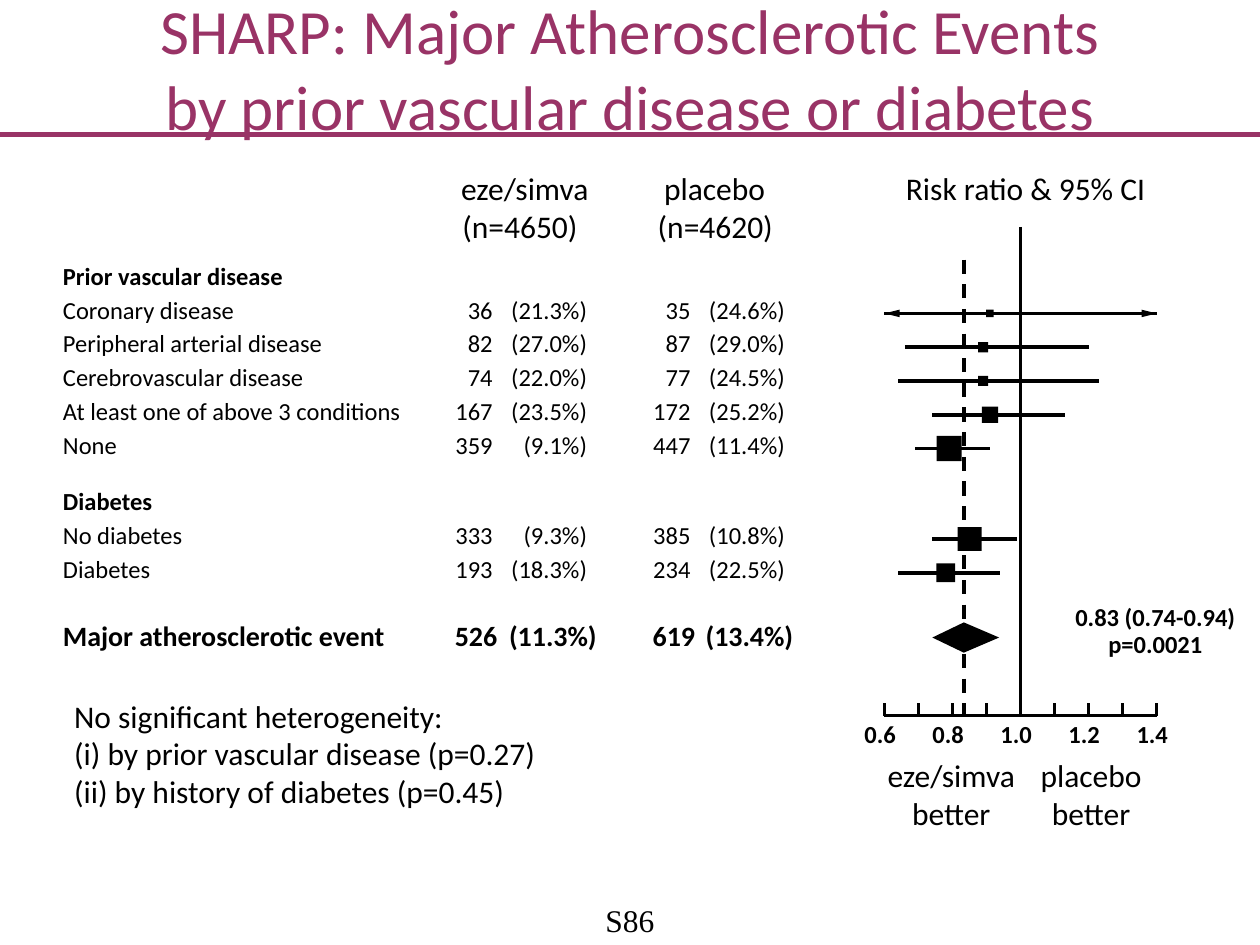
from dataclasses import dataclass

from lxml import etree
from pptx import Presentation
from pptx import util as u
from pptx.dml.color import RGBColor
from pptx.enum import dml, shapes, text
from pptx.oxml import ns

BLACK = "000000"
PLUM = "993366"
LEFT, CENTER, RIGHT = text.PP_ALIGN.LEFT, text.PP_ALIGN.CENTER, text.PP_ALIGN.RIGHT
LABEL_LEFT = 0.5
ROW_STEP = 0.268
AXIS_LEFT, AXIS_RIGHT, AXIS_TOP = 7.02, 9.18, 5.68
AXIS_START, INCHES_PER_UNIT = 0.6, 2.7


@dataclass(frozen=True)
class Row:
    label: str
    treated: tuple[str, str]
    placebo: tuple[str, str]
    ratio: float
    low: float
    high: float
    marker: float


@dataclass(frozen=True)
class Group:
    heading: str
    top: float
    rows: tuple[Row, ...]


GROUPS = (
    Group("Prior vascular disease", 2.07, (
        Row("Coronary disease", ("36", "(21.3%)"), ("35", "(24.6%)"), 0.91, 0.6, 1.4, 0.06),
        Row("Peripheral arterial disease", ("82", "(27.0%)"), ("87", "(29.0%)"), 0.89, 0.66, 1.2, 0.08),
        Row("Cerebrovascular disease", ("74", "(22.0%)"), ("77", "(24.5%)"), 0.89, 0.64, 1.23, 0.08),
        Row("At least one of above 3 conditions", ("167", "(23.5%)"), ("172", "(25.2%)"), 0.91, 0.74, 1.13, 0.13),
        Row("None", ("359", "(9.1%)"), ("447", "(11.4%)"), 0.79, 0.69, 0.91, 0.2),
    )),
    Group("Diabetes", 3.86, (
        Row("No diabetes", ("333", "(9.3%)"), ("385", "(10.8%)"), 0.85, 0.74, 0.99, 0.19),
        Row("Diabetes", ("193", "(18.3%)"), ("234", "(22.5%)"), 0.78, 0.64, 0.94, 0.15),
    )),
)


def colour(value: str) -> RGBColor:
    return RGBColor.from_string(value)


def ratio_x(ratio: float) -> float:
    return AXIS_LEFT + (ratio - AXIS_START) * INCHES_PER_UNIT


def add_text(page, lines: list[str], left: float, top: float, width: float, height: float,
             size: float = 14, bold: bool = False, align=LEFT, ink: str = BLACK,
             font: str = "Calibri", inset: tuple[float, float] = (0, 0), anchor=text.MSO_ANCHOR.TOP):
    box = page.shapes.add_textbox(u.Inches(left), u.Inches(top), u.Inches(width), u.Inches(height))
    frame = box.text_frame
    frame.word_wrap = True
    frame.vertical_anchor = anchor
    frame.margin_left = frame.margin_right = u.Inches(inset[0])
    frame.margin_top = frame.margin_bottom = u.Inches(inset[1])
    for index, line in enumerate(lines):
        para = frame.paragraphs[0] if index == 0 else frame.add_paragraph()
        para.text = line
        para.alignment = align
        para.font.name = font
        para.font.size = u.Pt(size)
        para.font.bold = bold
        para.font.color.rgb = colour(ink)


def add_line(page, start: tuple[float, float], end: tuple[float, float],
             ink: str = BLACK, width: float = 0, dashed: bool = False):
    line = page.shapes.add_connector(
        shapes.MSO_CONNECTOR.STRAIGHT, *(u.Inches(value) for value in start + end))
    line.line.color.rgb = colour(ink)
    line.line.width = u.Pt(width)
    if dashed:
        line.line.dash_style = dml.MSO_LINE.DASH
    etree.SubElement(line._element.spPr, ns.qn("a:effectLst"))


def fill_black(shape):
    shape.shadow.inherit = False
    shape.fill.solid()
    shape.fill.fore_color.rgb = colour(BLACK)
    shape.line.fill.background()


def add_polygon(page, points: list[tuple[float, float]]):
    corners = [(u.Inches(x), u.Inches(y)) for x, y in points]
    builder = page.shapes.build_freeform(*corners[0])
    builder.add_line_segments(corners[1:], close=True)
    fill_black(builder.convert_to_shape())


def add_row(page, row: Row, top: float):
    add_text(page, [row.label], LABEL_LEFT, top, 3.06, 0.31)
    for left, (count, percent) in ((3.56, row.treated), (5.13, row.placebo)):
        add_text(page, [count], left, top, 0.35, 0.31, align=RIGHT)
        add_text(page, [percent], left + 0.4, top, 0.7, 0.31, align=RIGHT)
    middle = top + 0.15
    half = row.marker / 2
    marker = page.shapes.add_shape(
        shapes.MSO_SHAPE.RECTANGLE, u.Inches(ratio_x(row.ratio) - half), u.Inches(middle - half),
        u.Inches(row.marker), u.Inches(row.marker))
    fill_black(marker)
    low, high = ratio_x(row.low), ratio_x(row.high)
    add_line(page, (low, middle), (high, middle))
    if row.low <= AXIS_START:
        for tip, base in ((low, low + 0.12), (high, high - 0.12)):
            add_polygon(page, [(tip, middle), (base, middle - 0.03), (base, middle + 0.03)])


def add_headings(page):
    for line, left, top in (
        ("eze/simva", 3.66, 1.34), ("(n=4650)", 3.67, 1.64),
        ("placebo", 5.27, 1.34), ("(n=4620)", 5.22, 1.64),
        ("Risk ratio & 95% CI", 7.19, 1.34),
    ):
        add_text(page, [line], left, top, 2.1 if left > 7 else 1.15, 0.34, size=18)


def add_total(page):
    for line, left, width in (
        ("Major atherosclerotic event", LABEL_LEFT, 2.8),
        ("526", 3.61, 0.42), ("(11.3%)", 4.04, 0.85),
        ("619", 5.18, 0.42), ("(13.4%)", 5.6, 0.85),
    ):
        add_text(page, [line], left, 4.91, width, 0.27, size=16, bold=True)
    for line, top in (("0.83 (0.74-0.94)", 4.78), ("p=0.0021", 4.99)):
        add_text(page, [line], 8.42, top, 1.5, 0.24, bold=True, align=CENTER)
    add_polygon(page, [(7.65, 4.94), (7.93, 5.06), (7.65, 5.18), (7.4, 5.06)])


def add_axis(page):
    one = ratio_x(1)
    add_line(page, (one, 1.8), (one, 5.61))
    add_line(page, (AXIS_LEFT, AXIS_TOP), (AXIS_RIGHT, AXIS_TOP))
    for tick in range(6, 15):
        x = ratio_x(tick / 10)
        add_line(page, (x, AXIS_TOP), (x, AXIS_TOP - 0.1))
        if tick % 2 == 0:
            add_text(page, [f"{tick / 10:.1f}"], x - 0.16, 5.71, 0.42, 0.31, bold=True)
    add_line(page, (7.65, 2.06), (7.65, AXIS_TOP), dashed=True)
    for arm, left in (("eze/simva", 6.95), ("placebo", 8.06)):
        add_text(page, [arm, "better"], left, 6, 1.2, 0.64, size=18, align=CENTER)


def main():
    deck = Presentation()
    deck.slide_width, deck.slide_height = u.Inches(10), u.Inches(7.5)
    page = deck.slides.add_slide(deck.slide_layouts[6])
    add_line(page, (0, 1.07), (10, 1.07), PLUM, 3)
    add_text(page, ["S86"], 4.7, 7.15, 0.6, 0.3, size=18, align=CENTER, font="Times New Roman")
    add_headings(page)
    for group in GROUPS:
        add_text(page, [group.heading], LABEL_LEFT, group.top, 2.2, 0.31, bold=True)
        for index, row in enumerate(group.rows, start=1):
            add_row(page, row, group.top + index * ROW_STEP)
    add_total(page)
    add_axis(page)
    add_text(page, ["SHARP: Major Atherosclerotic Events\vby prior vascular disease or diabetes"],
             0, 0, 10, 1.07, size=36, align=CENTER, ink=PLUM, inset=(0.1, 0.05),
             anchor=text.MSO_ANCHOR.MIDDLE)
    add_text(page, ["No significant heterogeneity:", "(i) by prior vascular disease (p=0.27)",
                    "(ii) by history of diabetes (p=0.45)"],
             0.49, 5.48, 5.75, 1.01, size=18, inset=(0.1, 0.05))
    deck.save("out.pptx")


if __name__ == "__main__":
    main()
